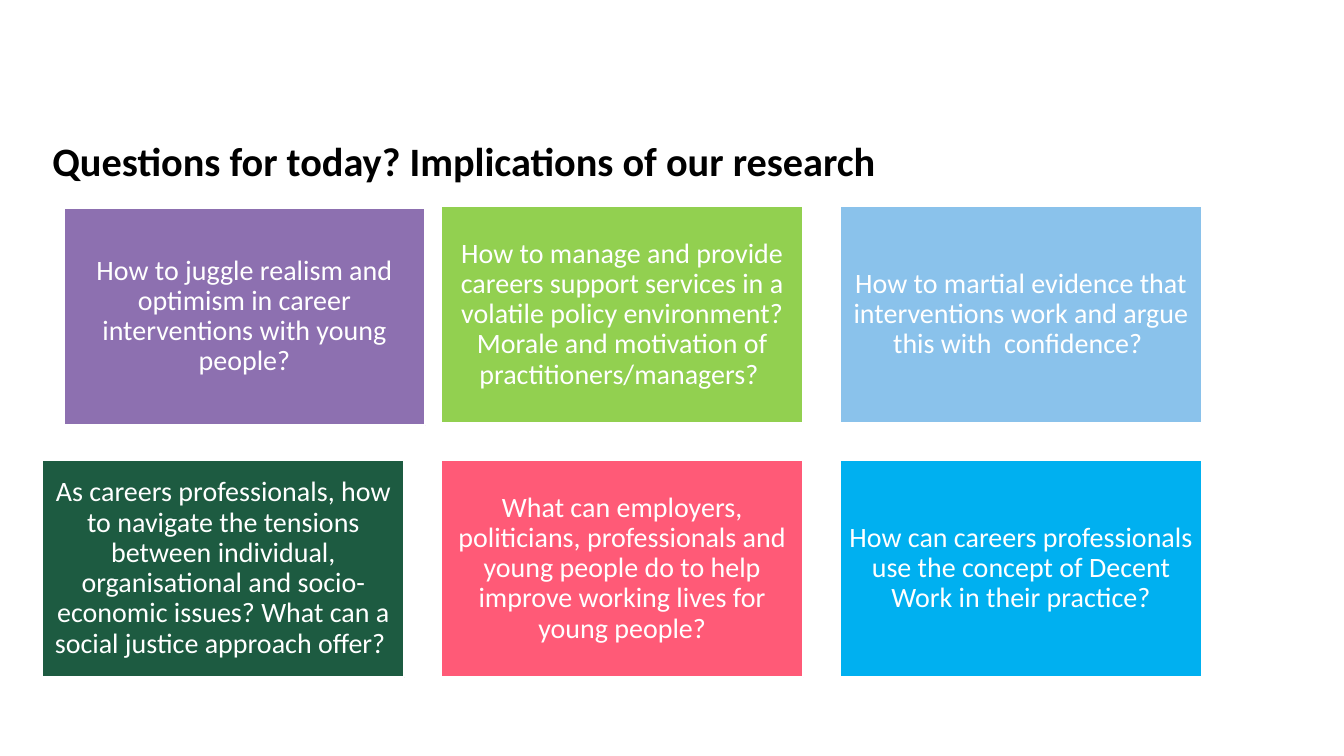
from dataclasses import dataclass

from pptx import Presentation
from pptx.dml.color import RGBColor
from pptx.enum import shapes, text
from pptx.util import Cm, Pt

FONT = "Calibri"
BLACK = RGBColor(0x00, 0x00, 0x00)
WHITE = RGBColor(0xFF, 0xFF, 0xFF)
PURPLE = RGBColor(0x8D, 0x70, 0xB0)
LIME = RGBColor(0x92, 0xD0, 0x50)
PALE_BLUE = RGBColor(0x8A, 0xC2, 0xEB)
DARK_GREEN = RGBColor(0x1D, 0x5B, 0x41)
PINK = RGBColor(0xFF, 0x5A, 0x77)
BRIGHT_BLUE = RGBColor(0x00, 0xB0, 0xF0)

COLUMNS = 3
GRID_LEFT, GRID_TOP = 1.07, 5.18
COLUMN_STEP, ROW_STEP = 10.05, 6.4
CARD_WIDTH, CARD_HEIGHT = 9.12, 5.49
CARD_INSET = 0.2


@dataclass(frozen=True)
class Question:
    wording: str
    fill: RGBColor
    shift_right: float = 0
    shift_down: float = 0


QUESTIONS = [
    Question(
        "How to juggle realism and optimism in career interventions with young people?",
        PURPLE, 0.53, 0.05,
    ),
    Question(
        "How to manage and provide careers support services in a volatile policy "
        "environment? Morale and motivation of practitioners/managers? ",
        LIME,
    ),
    Question(
        "How to martial evidence that interventions work and argue this with  confidence? ",
        PALE_BLUE,
    ),
    Question(
        "As careers professionals, how to navigate the tensions between individual, "
        "organisational and socio-economic issues? What can a social justice approach offer? ",
        DARK_GREEN,
    ),
    Question(
        "What can employers, politicians, professionals and young people do to help "
        "improve working lives for young people?",
        PINK,
    ),
    Question(
        "How can careers professionals use the concept of Decent Work in their practice?",
        BRIGHT_BLUE,
    ),
]


def write(box, wording: str, size: float, color: RGBColor, bold: bool = False):
    frame = box.text_frame
    frame.word_wrap = True
    frame.vertical_anchor = text.MSO_ANCHOR.MIDDLE
    para = frame.paragraphs[0]
    para.text = wording
    para.line_spacing = 0.9
    para.font.name = FONT
    para.font.size = Pt(size)
    para.font.bold = bold
    para.font.color.rgb = color
    return para


def add_title(page, wording: str) -> None:
    box = page.shapes.add_textbox(Cm(1.07), Cm(2.29), Cm(29.21), Cm(3.68))
    write(box, wording, 28.8, BLACK, bold=True)


def add_card(page, index: int, question: Question) -> None:
    row, column = divmod(index, COLUMNS)
    card = page.shapes.add_shape(
        shapes.MSO_SHAPE.RECTANGLE,
        Cm(GRID_LEFT + column * COLUMN_STEP + question.shift_right),
        Cm(GRID_TOP + row * ROW_STEP + question.shift_down),
        Cm(CARD_WIDTH),
        Cm(CARD_HEIGHT),
    )
    card.shadow.inherit = False
    card.fill.solid()
    card.fill.fore_color.rgb = question.fill
    card.line.color.rgb = WHITE
    card.line.width = Pt(1.5)
    frame = card.text_frame
    frame.margin_left = frame.margin_right = Cm(CARD_INSET)
    frame.margin_top = frame.margin_bottom = Cm(CARD_INSET)
    para = write(card, question.wording, 20, WHITE)
    para.alignment = text.PP_ALIGN.CENTER
    para.space_after = Pt(7)


def main() -> None:
    deck = Presentation()
    deck.slide_width, deck.slide_height = Cm(33.87), Cm(19.05)
    page = deck.slides.add_slide(deck.slide_layouts[6])
    add_title(page, "Questions for today? Implications of our research")
    for index, question in enumerate(QUESTIONS):
        add_card(page, index, question)
    deck.save("out.pptx")


if __name__ == "__main__":
    main()
